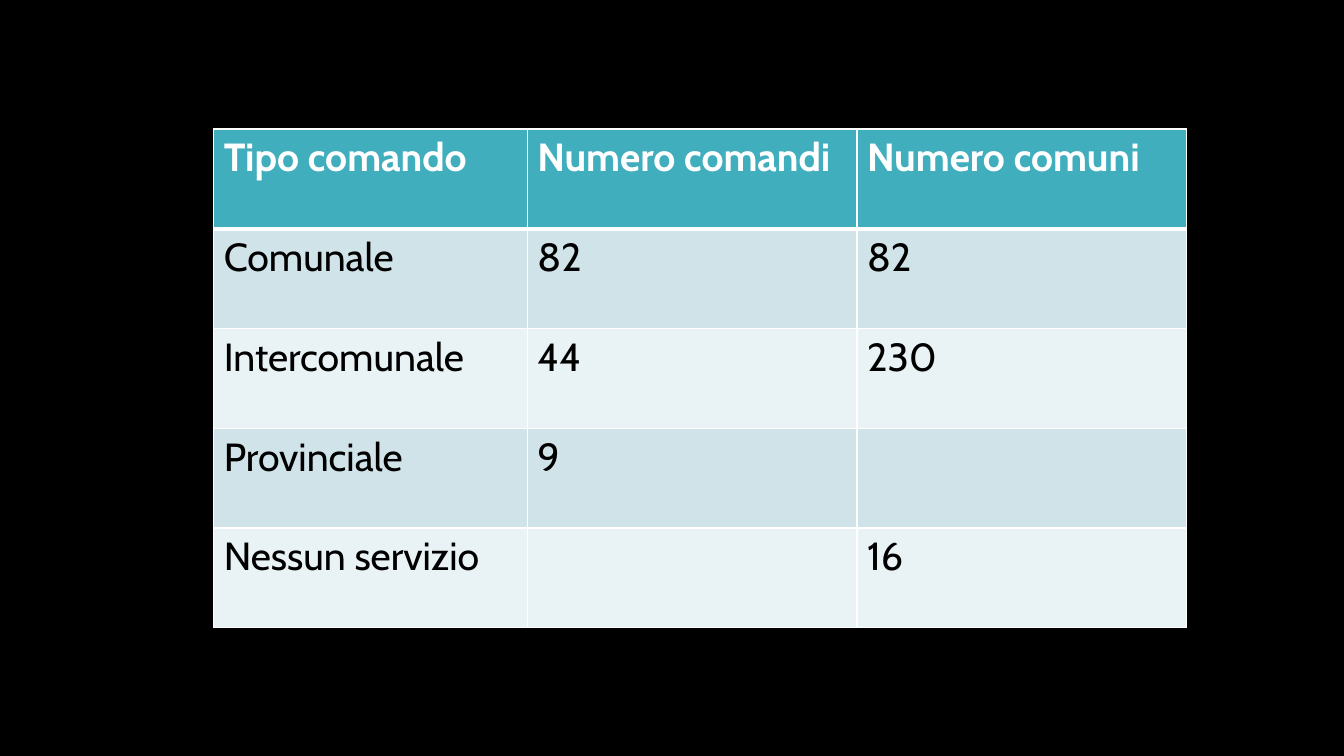
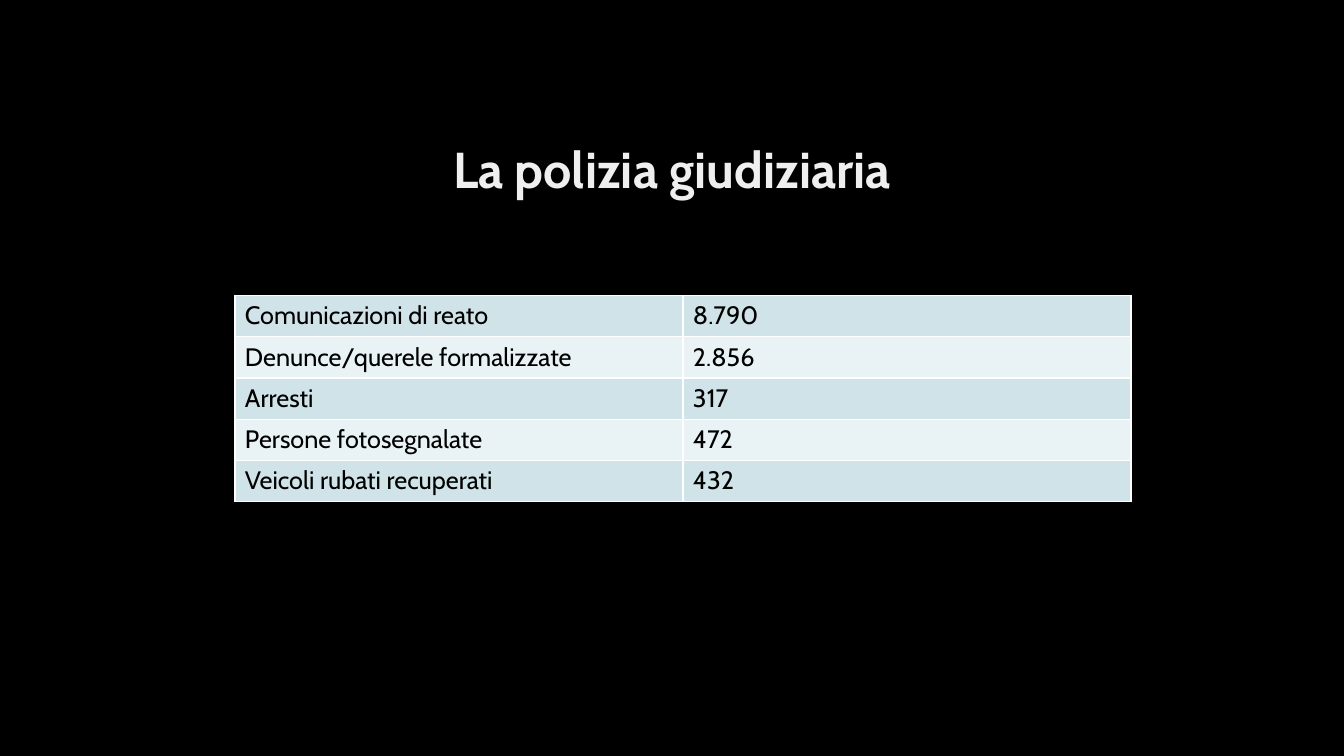
from lxml.etree import SubElement
from pptx import Presentation
from pptx.dml.color import RGBColor as RGB
from pptx.enum.text import MSO_AUTO_SIZE as Fit, PP_ALIGN as Align
from pptx.oxml.ns import qn
from pptx.util import Inches, Pt

FONT = "Cabin"
HUES = {
    "back": "000000", "title": "EFEFEF", "head": "41AEBD",
    "dark": "CFE3E8", "light": "E9F2F4",
    "text": "000000", "white": "FFFFFF",
}
WIDE, HIGH = 13.33, 7.5


def style(para, size, hue, bold=False):
    font = para.font
    font.name, font.size, font.bold = FONT, Pt(size), bold
    font.color.rgb = RGB.from_string(HUES[hue])


def edge(cell, side, width):
    """Draw a white border on one side (L, R, T or B) of a cell."""
    line = SubElement(cell._tc.get_or_add_tcPr(), qn(f"a:ln{side}"), w=str(Pt(width)))
    fill = SubElement(line, qn("a:solidFill"))
    SubElement(fill, qn("a:srgbClr"), val=HUES["white"])


pages = [
    {
        "title": None, "head": True, "size": 28,
        "left": 2.12, "top": 1.28, "cols": [3.11, 3.27, 3.27], "row": 0.99,
        "data": [
            ("Tipo comando", "Numero comandi", "Numero comuni"),
            ("Comunale", "82", "82"),
            ("Intercomunale", "44", "230"),
            ("Provinciale", "9", ""),
            ("Nessun servizio", "", "16"),
        ],
    },
    {
        "title": "La polizia giudiziaria", "head": False, "size": 18,
        "left": 2.33, "top": 2.93, "cols": [WIDE / 3] * 2, "row": 0.41,
        "data": [
            ("Comunicazioni di reato", "8.790"),
            ("Denunce/querele formalizzate", "2.856"),
            ("Arresti", "317"),
            ("Persone fotosegnalate", "472"),
            ("Veicoli rubati recuperati", "432"),
        ],
    },
]

deck = Presentation()
deck.slide_width, deck.slide_height = Inches(WIDE), Inches(HIGH)

for page in pages:
    slide = deck.slides.add_slide(deck.slide_layouts[6])
    back = slide.background.fill
    back.solid()
    back.fore_color.rgb = RGB.from_string(HUES["back"])

    if page["title"]:
        box = slide.shapes.add_textbox(
            Inches(WIDE / 4), Inches(1.39), Inches(WIDE / 2), Inches(0.65))
        frame = box.text_frame
        frame.word_wrap = True
        frame.auto_size = Fit.SHAPE_TO_FIT_TEXT
        para = frame.paragraphs[0]
        para.text = page["title"]
        para.alignment = Align.CENTER
        para.line_spacing = 0.9
        para.space_after = Pt(6)
        style(para, 36, "title", True)

    data, cols, head = page["data"], page["cols"], page["head"]
    table = slide.shapes.add_table(
        len(data), len(cols), Inches(page["left"]), Inches(page["top"]),
        Inches(sum(cols)), Inches(page["row"] * len(data))).table
    table.first_row = head
    for col, width in zip(table.columns, cols):
        col.width = Inches(width)

    for r, texts in enumerate(data):
        table.rows[r].height = Inches(page["row"])
        top = head and r == 0
        band = "head" if top else ("dark", "light")[(r - head) % 2]
        for c, text in enumerate(texts):
            cell = table.cell(r, c)
            for side in "LRTB":
                thick = head and (r, side) in ((0, "B"), (1, "T"))
                edge(cell, side, 3 if thick else 1)
            cell.fill.solid()
            cell.fill.fore_color.rgb = RGB.from_string(HUES[band])
            para = cell.text_frame.paragraphs[0]
            para.text = text
            style(para, page["size"], "white" if top else "text", top)

deck.save("out.pptx")
